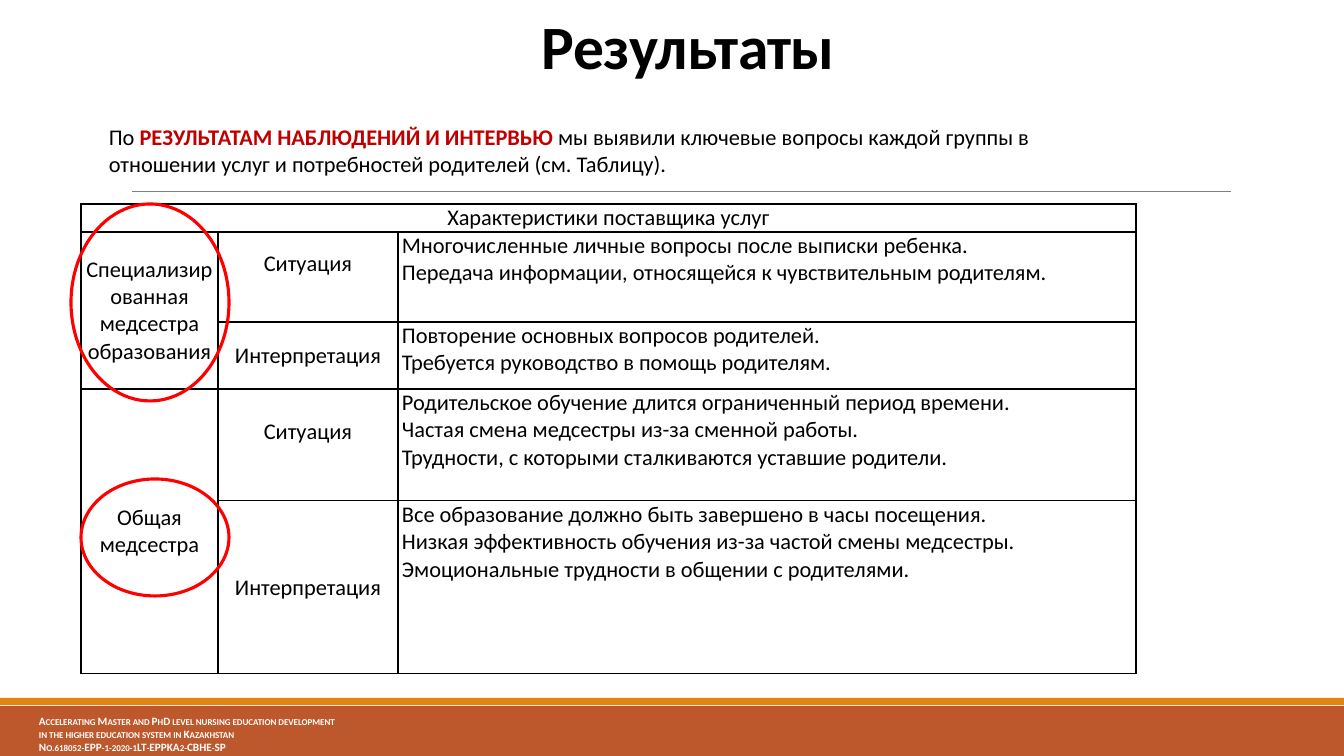
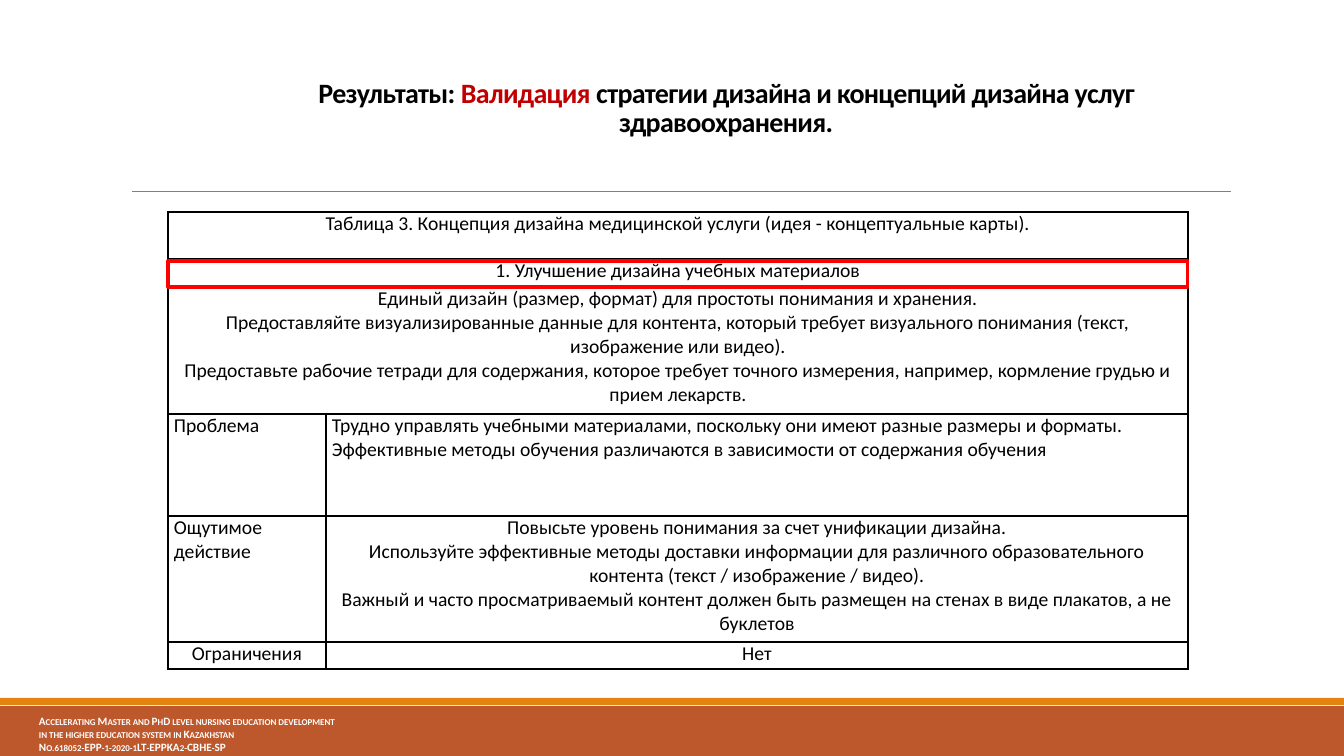
from lxml import etree
from pptx import Presentation
from pptx.dml.color import RGBColor
from pptx.enum.shapes import MSO_CONNECTOR as LINE, MSO_SHAPE as SHAPE
from pptx.enum.text import MSO_ANCHOR as ANCHOR, PP_ALIGN as ALIGN
from pptx.oxml.ns import qn
from pptx.util import Pt

PX = 914400 / 100.8
W, H = 1344, 756
FONT = "Calibri"
BLACK = RGBColor(0x00, 0x00, 0x00)
WHITE = RGBColor(0xFF, 0xFF, 0xFF)
GRAY = RGBColor(0x80, 0x80, 0x80)
RUST = RGBColor(0xBD, 0x58, 0x2C)
ORANGE = RGBColor(0xE4, 0x83, 0x12)
CRIMSON = RGBColor(0xC0, 0x00, 0x00)
RED = RGBColor(0xFF, 0x00, 0x00)

# Cell styles: alignment, anchor, bottom inset in px
LEFT = (ALIGN.LEFT, ANCHOR.TOP, 0)
CENTER = (ALIGN.CENTER, ANCHOR.TOP, 0)
MIDDLE = (ALIGN.CENTER, ANCHOR.MIDDLE, 0)
RAISED = (ALIGN.CENTER, ANCHOR.MIDDLE, 27)

# Shared content
FOOTER = [
    "Accelerating Master and PhD level nursing education development",
    "in the higher education system in Kazakhstan",
    "No.618052-EPP-1-2020-1LT-EPPKA2-CBHE-SP",
]

# Slide content: text runs are (text, colour, bold);
# cells are (row, column, row span, column span, style, lines)
SLIDES = [
    {
        "title": {"box": (67, 0, 1243, 87), "size": 44,
                  "runs": [("Результаты", BLACK, True)]},
        "intro": {"box": (99, 118, 1016, 65), "size": 16, "runs": [
            ("По ", BLACK, False),
            ("РЕЗУЛЬТАТАМ НАБЛЮДЕНИЙ И ИНТЕРВЬЮ ", CRIMSON, True),
            ("мы выявили ключевые вопросы каждой группы в отношении услуг "
             "и потребностей родителей (см. Таблицу).", BLACK, False)]},
        "table": {
            "at": (81, 204), "size": 16, "inset": 4, "fill": None,
            "cols": [137, 180, 738], "rows": [28, 90, 67, 112, 173],
            "cells": [
                (0, 0, 1, 3, CENTER, ["Характеристики поставщика услуг"]),
                (1, 0, 2, 1, MIDDLE, ["Специализированная медсестра образования"]),
                (1, 1, 1, 1, RAISED, ["Ситуация"]),
                (1, 2, 1, 1, LEFT, [
                    "Многочисленные личные вопросы после выписки ребенка.",
                    "Передача информации, относящейся к чувствительным родителям."]),
                (2, 1, 1, 1, MIDDLE, ["Интерпретация"]),
                (2, 2, 1, 1, LEFT, [
                    "Повторение основных вопросов родителей.",
                    "Требуется руководство в помощь родителям."]),
                (3, 0, 2, 1, MIDDLE, ["Общая медсестра"]),
                (3, 1, 1, 1, RAISED, ["Ситуация"]),
                (3, 2, 1, 1, LEFT, [
                    "Родительское обучение длится ограниченный период времени.",
                    "Частая смена медсестры из-за сменной работы.",
                    "Трудности, с которыми сталкиваются уставшие родители."]),
                (4, 1, 1, 1, MIDDLE, ["Интерпретация"]),
                (4, 2, 1, 1, LEFT, [
                    "Все образование должно быть завершено в часы посещения.",
                    "Низкая эффективность обучения из-за частой смены медсестры.",
                    "Эмоциональные трудности в общении с родителями."]),
            ]},
        "marks": [(SHAPE.OVAL, (71, 204, 158, 197)),
                  (SHAPE.OVAL, (81, 479, 148, 117))],
    },
    {
        "title": {"box": (265, 31, 922, 112), "size": 20, "runs": [
            ("Результаты: ", BLACK, True),
            ("Валидация", CRIMSON, True),
            (" стратегии дизайна и концепций дизайна услуг здравоохранения.",
             BLACK, True)]},
        "table": {
            "at": (168, 212), "size": 14, "inset": 6, "fill": WHITE,
            "cols": [158, 862], "rows": [47, 28, 127, 102, 126, 27],
            "cells": [
                (0, 0, 1, 2, CENTER, [
                    "Таблица 3. Концепция дизайна медицинской услуги "
                    "(идея - концептуальные карты)."]),
                (1, 0, 1, 2, CENTER, ["1. Улучшение дизайна учебных материалов"]),
                (2, 0, 1, 2, CENTER, [
                    "Единый дизайн (размер, формат) для простоты понимания и хранения.",
                    "Предоставляйте визуализированные данные для контента, который "
                    "требует визуального понимания (текст, изображение или видео).",
                    "Предоставьте рабочие тетради для содержания, которое требует "
                    "точного измерения, например, кормление грудью и прием лекарств."]),
                (3, 0, 1, 1, LEFT, ["Проблема"]),
                (3, 1, 1, 1, LEFT, [
                    "Трудно управлять учебными материалами, поскольку они имеют "
                    "разные размеры и форматы.",
                    "Эффективные методы обучения различаются в зависимости от "
                    "содержания обучения"]),
                (4, 0, 1, 1, LEFT, ["Ощутимое действие"]),
                (4, 1, 1, 1, CENTER, [
                    "Повысьте уровень понимания за счет унификации дизайна.",
                    "Используйте эффективные методы доставки информации для различного "
                    "образовательного контента (текст / изображение / видео).",
                    "Важный и часто просматриваемый контент должен быть размещен "
                    "на стенах в виде плакатов, а не буклетов"]),
                (5, 0, 1, 1, CENTER, ["Ограничения"]),
                (5, 1, 1, 1, CENTER, ["Нет"]),
            ]},
        "marks": [(SHAPE.RECTANGLE, (168, 261, 1020, 26))],
    },
]


def px(*values):
    return [round(v * PX) for v in values]


def set_font(p, size, color, bold=False):
    p.font.name, p.font.size = FONT, Pt(size)
    p.font.color.rgb, p.font.bold = color, bold


def add_box(s, box):
    tf = s.shapes.add_textbox(*px(*box)).text_frame
    tf.word_wrap = True
    return tf


def add_shape(s, kind, box, fill=None, line=None):
    sp = s.shapes.add_shape(kind, *px(*box))
    sp.shadow.inherit = False
    if fill is None:
        sp.fill.background()
    else:
        sp.fill.solid()
        sp.fill.fore_color.rgb = fill
    if line is None:
        sp.line.fill.background()
    else:
        sp.line.color.rgb, sp.line.width = line, Pt(2.25)


def add_runs(tf, size, runs):
    p = tf.paragraphs[0]
    set_font(p, size, BLACK)
    for text, color, bold in runs:
        r = p.add_run()
        r.text = text
        r.font.color.rgb, r.font.bold = color, bold
    return p


def add_frame(s):
    """Bands, rule and footer shared by the slides."""
    add_shape(s, SHAPE.RECTANGLE, (0, 706, W, 50), RUST)
    add_shape(s, SHAPE.RECTANGLE, (0, 698, W, 7), ORANGE)
    rule = s.shapes.add_connector(LINE.STRAIGHT, *px(132, 191, 1231, 191))
    rule.line.color.rgb, rule.line.width = GRAY, Pt(0.5)
    etree.SubElement(rule._element.spPr, qn("a:effectLst"))
    tf = add_box(s, (29, 714, 463, 42))
    tf.margin_top = tf.margin_bottom = 0
    for i, text in enumerate(FOOTER):
        p = tf.add_paragraph() if i else tf.paragraphs[0]
        r = p.add_run()
        r.text = text
        r._r.get_or_add_rPr().set("cap", "small")
        set_font(p, 8, WHITE, True)


def add_title(s, box, size, runs):
    tf = add_box(s, box)
    tf.vertical_anchor = ANCHOR.BOTTOM
    p = add_runs(tf, size, runs)
    p.alignment, p.line_spacing = ALIGN.CENTER, 0.85
    for r in p.runs:
        r._r.get_or_add_rPr().set("spc", "-50")


def add_borders(cell):
    tcPr = cell._tc.get_or_add_tcPr()
    for side in ("a:lnL", "a:lnR", "a:lnT", "a:lnB"):
        ln = etree.SubElement(tcPr, qn(side), w=str(Pt(1)))
        fill = etree.SubElement(ln, qn("a:solidFill"))
        etree.SubElement(fill, qn("a:srgbClr"), val=str(BLACK))


def add_grid(s, at, size, inset, fill, cols, rows, cells):
    table = s.shapes.add_table(len(rows), len(cols),
                               *px(*at, sum(cols), sum(rows))).table
    table.first_row = table.horz_banding = False
    for col, width in zip(table.columns, px(*cols)):
        col.width = width
    for row, height in zip(table.rows, px(*rows)):
        row.height = height
    for cell in table.iter_cells():
        cell.margin_left = cell.margin_right = px(inset)[0]
        cell.margin_top = cell.margin_bottom = 0
        add_borders(cell)
        if fill is None:
            cell.fill.background()
        else:
            cell.fill.solid()
            cell.fill.fore_color.rgb = fill
        set_font(cell.text_frame.paragraphs[0], size, BLACK)
    for row, col, height, width, (align, anchor, bottom), lines in cells:
        cell = table.cell(row, col)
        if height * width > 1:
            cell.merge(table.cell(row + height - 1, col + width - 1))
        cell.text = "\n".join(lines)
        cell.vertical_anchor = anchor
        cell.margin_bottom = px(bottom)[0]
        for p in cell.text_frame.paragraphs:
            p.alignment = align
            set_font(p, size, BLACK)


def main():
    prs = Presentation()
    prs.slide_width, prs.slide_height = px(W, H)
    for data in SLIDES:
        s = prs.slides.add_slide(prs.slide_layouts[6])
        add_frame(s)
        add_title(s, **data["title"])
        if "intro" in data:
            intro = data["intro"]
            add_runs(add_box(s, intro["box"]), intro["size"], intro["runs"])
        add_grid(s, **data["table"])
        for kind, box in data["marks"]:
            add_shape(s, kind, box, line=RED)
    prs.save("out.pptx")


if __name__ == "__main__":
    main()
